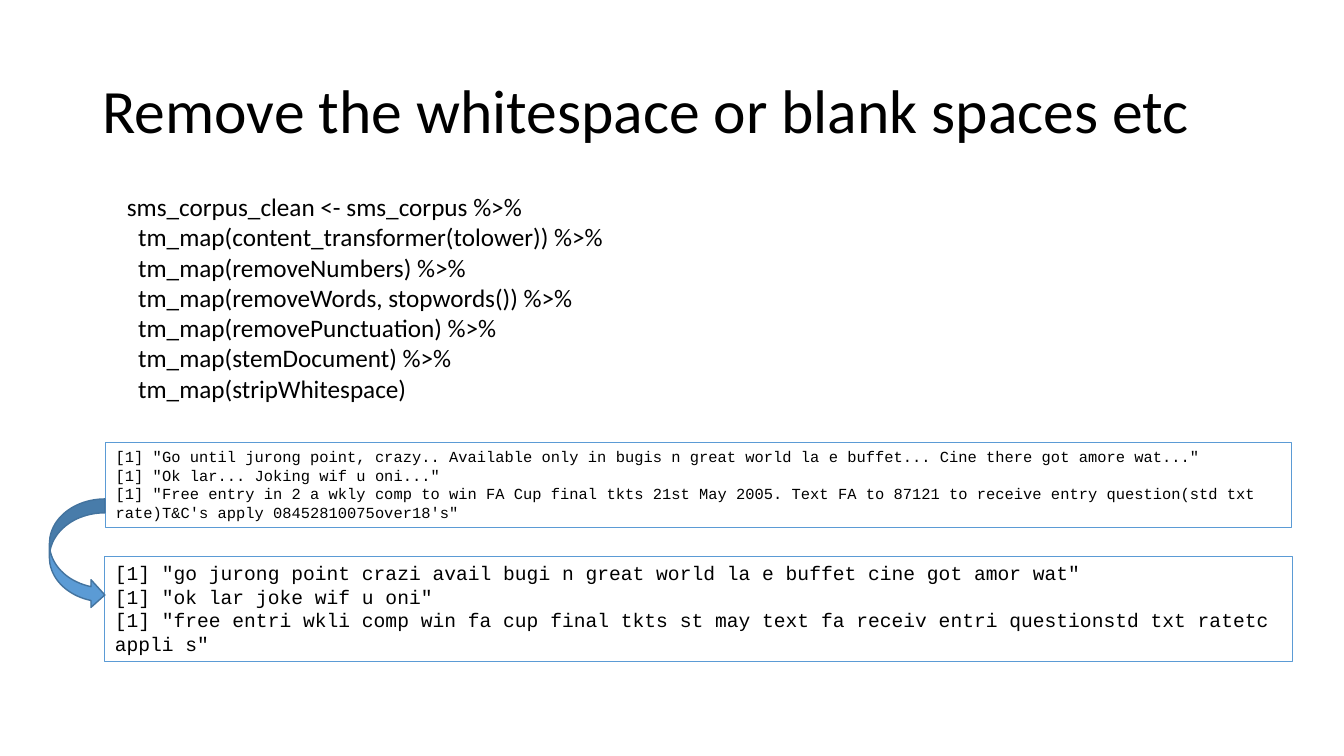
"""Build a slide on stripping whitespace from a text corpus."""
from pptx import Presentation
from pptx.dml.color import RGBColor
from pptx.enum import shapes, text
from pptx.util import Pt

BLACK = RGBColor(0x00, 0x00, 0x00)
BLUE = RGBColor(0x5B, 0x9B, 0xD5)
NAVY = RGBColor(0x43, 0x73, 0x9E)

CODE = """sms_corpus_clean <- sms_corpus %>%
  tm_map(content_transformer(tolower)) %>%
  tm_map(removeNumbers) %>%
  tm_map(removeWords, stopwords()) %>%
  tm_map(removePunctuation) %>%
  tm_map(stemDocument) %>%
  tm_map(stripWhitespace)"""
RAW = """[1] "Go until jurong point, crazy.. Available only in bugis n great world la e buffet... Cine there got amore wat..."
[1] "Ok lar... Joking wif u oni..."
[1] "Free entry in 2 a wkly comp to win FA Cup final tkts 21st May 2005. Text FA to 87121 to receive entry question(std txt rate)T&C's apply 08452810075over18's\""""
CLEAN = """[1] "go jurong point crazi avail bugi n great world la e buffet cine got amor wat"
[1] "ok lar joke wif u oni"
[1] "free entri wkli comp win fa cup final tkts st may text fa receiv entri questionstd txt ratetc appli s\""""


def style(frame, words, font, size):
    frame.text = words
    frame.word_wrap = True
    for para in frame.paragraphs:
        para.alignment = text.PP_ALIGN.LEFT
        for run in para.runs:
            run.font.name = font
            run.font.size = Pt(size)
            run.font.color.rgb = BLACK


deck = Presentation()
deck.slide_width, deck.slide_height = Pt(960), Pt(540)
slide = deck.slides.add_slide(deck.slide_layouts[5])

title = slide.shapes.title
title.left, title.top, title.width, title.height = Pt(66), Pt(28.8), Pt(828), Pt(104.4)
style(title.text_frame, "Remove the whitespace or blank spaces etc", "Calibri", 44)
title.text_frame.vertical_anchor = text.MSO_ANCHOR.MIDDLE
title.text_frame.auto_size = text.MSO_AUTO_SIZE.NONE
title.text_frame.paragraphs[0].line_spacing = 0.9

for words, font, size, left, top, width, height, framed in (
    (CODE, "Calibri", 18, 83.5, 133.2, 498.2, 159.8, False),
    (CLEAN, "Courier New", 14, 74.9, 397.4, 848.2, 74.9, True),
    (RAW, "Courier New", 11, 75.6, 316.1, 846.7, 60.5, True),
):
    box = slide.shapes.add_textbox(Pt(left), Pt(top), Pt(width), Pt(height))
    style(box.text_frame, words, font, size)
    box.text_frame.auto_size = text.MSO_AUTO_SIZE.SHAPE_TO_FIT_TEXT
    if framed:
        box.line.color.rgb = BLUE
        box.line.width = Pt(0.75)

arrow = slide.shapes.add_shape(
    shapes.MSO_SHAPE.CURVED_RIGHT_ARROW, Pt(35.3), Pt(356.4), Pt(39.6), Pt(78.5))
arrow.shadow.inherit = False
arrow.fill.solid()
arrow.fill.fore_color.rgb = BLUE
arrow.line.color.rgb = NAVY
arrow.line.width = Pt(1)

deck.save("out.pptx")
